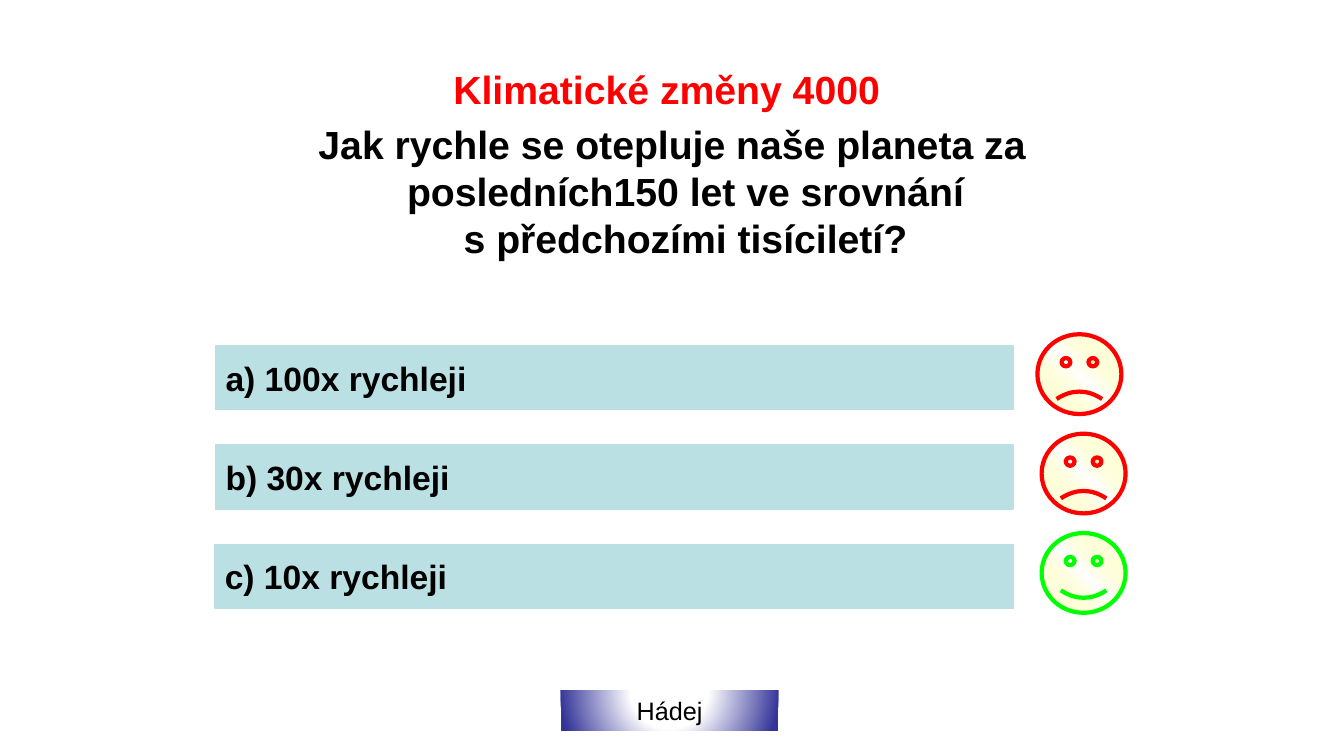
"""Build a quiz slide with one question, three answers and a button."""
from lxml import etree
from pptx import Presentation
from pptx.dml.color import RGBColor
from pptx.enum.shapes import MSO_SHAPE
from pptx.enum.text import MSO_ANCHOR, PP_ALIGN
from pptx.oxml import parse_xml
from pptx.util import Pt

BUTTON, SMILEY = MSO_SHAPE.ACTION_BUTTON_CUSTOM, MSO_SHAPE.SMILEY_FACE
MIDDLE = MSO_ANCHOR.MIDDLE
LEFT, CENTER = PP_ALIGN.LEFT, PP_ALIGN.CENTER
NAMESPACE = "http://schemas.openxmlformats.org/drawingml/2006/main"

HEADING = [
    ("Klimatické změny 4000 ", "FF0000"),
    ("Jak rychle se otepluje naše planeta za posledních150 let ve srovnání \n"
     "s předchozími tisíciletí? ", "000000"),
]
RED, GREEN = "FF0000", "00FF00"
ANSWERS = [
    ("a) 100x rychleji", 154, 569.5, 741, RED, -0.047),
    ("b) 30x rychleji", 154, 569.5, 744, RED, -0.047),
    ("c) 10x rychleji", 153.5, 570.5, 744, GREEN, 0.047),
]
ANSWER_TOP, FACE_TOP, ROW_STEP = 247, 238.75, 71
FACE_STOPS = [(0, "FFFFFF", 100), (50, "FFFF66", 0), (100, "FFFFFF", 100)]
FACE_DIRECTION = '<a:lin ang="18900000" scaled="1"/>'
BUTTON_STOPS = [(0, "FFFFFF", 100), (35, "FFFFFF", 100), (100, "333399", 100)]
BUTTON_DIRECTION = ('<a:path path="circle"><a:fillToRect l="50000" t="-80000" '
                    'r="50000" b="180000"/></a:path>')


def color(value):
    return RGBColor.from_string(value)


def style(paragraph, text, size, text_color, bold, alignment):
    paragraph.text = text
    paragraph.alignment = alignment
    font = paragraph.font
    font.name, font.size, font.bold = "Arial", Pt(size), bold
    font.color.rgb = color(text_color)


def add_shape(slide, kind, left, top, width, height):
    shape = slide.shapes.add_shape(kind, Pt(left), Pt(top), Pt(width), Pt(height))
    shape.shadow.inherit = False
    return shape


def label(shape, text, size, bold, alignment):
    frame = shape.text_frame
    frame.word_wrap = False
    frame.vertical_anchor = MIDDLE
    style(frame.paragraphs[0], text, size, "000000", bold, alignment)


def fill_gradient(shape, stops, direction):
    stop_xml = "".join(
        f'<a:gs pos="{position * 1000}"><a:srgbClr val="{value}">'
        f'<a:alpha val="{alpha * 1000}"/></a:srgbClr></a:gs>'
        for position, value, alpha in stops)
    gradient = parse_xml(f'<a:gradFill xmlns:a="{NAMESPACE}" rotWithShape="1">'
                         f'<a:gsLst>{stop_xml}</a:gsLst>{direction}</a:gradFill>')
    geometry = shape.element.spPr.find(etree.QName(NAMESPACE, "prstGeom").text)
    geometry.addnext(gradient)


def add_heading(slide):
    frame = slide.shapes.add_textbox(Pt(148.5), Pt(43), Pt(663), Pt(54)).text_frame
    frame.word_wrap = True
    for index, (text, text_color) in enumerate(HEADING):
        paragraph = frame.add_paragraph() if index else frame.paragraphs[0]
        properties = paragraph._p.get_or_add_pPr()
        properties.set("marL", str(Pt(27)))
        properties.set("indent", str(Pt(-27)))
        if index:
            paragraph.space_before = Pt(5.6)
        style(paragraph, text, 28, text_color, True, CENTER)


def add_answer(slide, row, text, left, width, face_left, face_color, smile):
    offset = row * ROW_STEP
    bar = add_shape(slide, BUTTON, left, ANSWER_TOP + offset, width, 45.5)
    bar.fill.solid()
    bar.fill.fore_color.rgb = bar.line.color.rgb = color("BBE0E3")
    bar.line.width = Pt(1)
    label(bar, text, 24, True, LEFT)
    face = add_shape(slide, SMILEY, face_left, FACE_TOP + offset, 60, 57)
    face.adjustments[0] = smile
    fill_gradient(face, FACE_STOPS, FACE_DIRECTION)
    face.line.color.rgb = color(face_color)
    face.line.width = Pt(3)


def main():
    presentation = Presentation()
    presentation.slide_width, presentation.slide_height = Pt(960), Pt(540)
    slide = presentation.slides.add_slide(presentation.slide_layouts[6])
    add_heading(slide)
    for row, answer in enumerate(ANSWERS):
        add_answer(slide, row, *answer)
    button = add_shape(slide, BUTTON, 400.5, 493, 155.5, 29)
    fill_gradient(button, BUTTON_STOPS, BUTTON_DIRECTION)
    button.line.fill.background()
    label(button, "Hádej", 18, False, CENTER)
    presentation.save("out.pptx")


if __name__ == "__main__":
    main()
